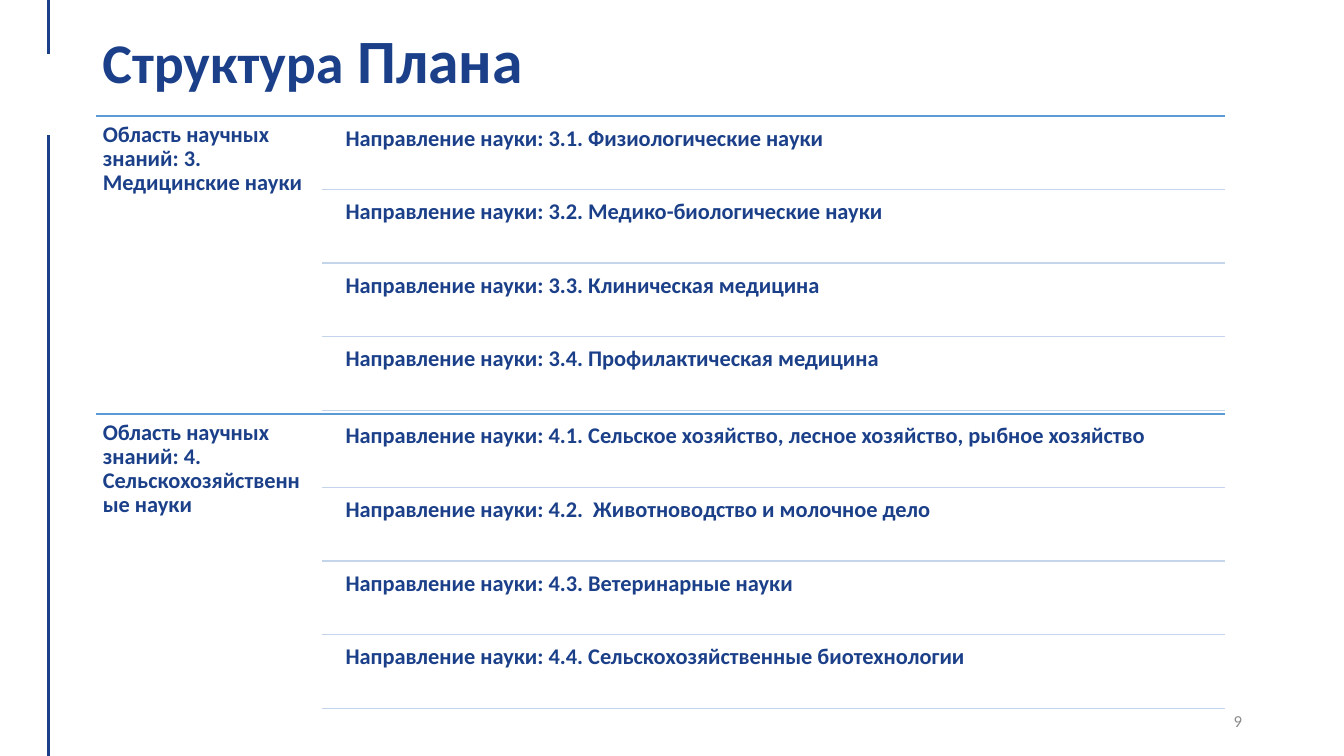
from pptx import Presentation, util as u
from pptx.dml.color import RGBColor
from pptx.enum import shapes, text
from pptx.oxml.ns import qn
from lxml import etree

HUES = {"navy": "1B4089", "blue": "5B9BD5", "pale": "C4D5EB", "gray": "8C8C8C"}
AREAS = [
    ("3. Медицинские науки", [
        "3.1. Физиологические науки",
        "3.2. Медико-биологические науки",
        "3.3. Клиническая медицина",
        "3.4. Профилактическая медицина"]),
    ("4. Сельскохозяйственные науки", [
        "4.1. Сельское хозяйство, лесное хозяйство, рыбное хозяйство",
        "4.2.  Животноводство и молочное дело",
        "4.3. Ветеринарные науки",
        "4.4. Сельскохозяйственные биотехнологии"]),
]
KEY, END = 2, 10      # columns: width of the area names, right edge
BLOCK = 4.05          # rows taken by one area
PAD = 0.05            # rows between a rule and its text


class Deck:
    """Style and current slide; places are in columns and rows of the grid."""
    FONT = "Calibri"
    LEFT, TOP, COL, ROW = 0.95, 1.15, 1.12, 0.73  # inches

    def __init__(self):
        self.prs = Presentation()
        self.prs.slide_width, self.prs.slide_height = u.Inches(13.33), u.Inches(7.5)
        self.slide = self.prs.slides.add_slide(self.prs.slide_layouts[5])

    def spot(self, col, row):
        return (u.Inches(self.LEFT + col * self.COL),
                u.Inches(self.TOP + row * self.ROW))

    def span(self, cols, rows):
        return u.Inches(cols * self.COL), u.Inches(rows * self.ROW)

    def style(self, font, size, hue, bold):
        font.name, font.size, font.bold = self.FONT, u.Pt(size), bold
        font.color.rgb = RGBColor.from_string(HUES[hue])

    def title(self, col, row, cols, rows, parts):
        box = self.slide.shapes.title
        box.left, box.top = self.spot(col, row)
        box.width, box.height = self.span(cols, rows)
        box.text_frame.auto_size = text.MSO_AUTO_SIZE.NONE
        box.text_frame.vertical_anchor = text.MSO_ANCHOR.MIDDLE
        par = box.text_frame.paragraphs[0]
        par.alignment, par.line_spacing = text.PP_ALIGN.LEFT, 0.9
        for words, size in parts:
            run = par.add_run()
            run.text = words
            self.style(run.font, size, "navy", True)

    def line(self, start, stop, hue, width=1):
        rule = self.slide.shapes.add_connector(
            shapes.MSO_CONNECTOR.STRAIGHT, *self.spot(*start), *self.spot(*stop))
        rule.line.color.rgb = RGBColor.from_string(HUES[hue])
        rule.line.width = u.Pt(width)
        etree.SubElement(rule._element.spPr, qn("a:effectLst"))

    def text(self, col, row, cols, rows, words, size=16, hue="navy", bold=True):
        box = self.slide.shapes.add_textbox(
            *self.spot(col, row), *self.span(cols, rows))
        frame = box.text_frame
        frame.word_wrap = True
        par = frame.paragraphs[0]
        par.text = words
        self.style(par.font, size, hue, bold)
        return frame, par

    def entry(self, *place):
        frame, par = self.text(*place)
        frame.margin_left = frame.margin_right = u.Inches(0.07)
        frame.margin_top = frame.margin_bottom = u.Inches(0.07)
        par.line_spacing, par.space_after = 0.9, u.Pt(5.6)

    def number(self, col, row, cols, rows, words):
        frame, par = self.text(col, row, cols, rows, words, 12, "gray", False)
        frame.vertical_anchor = text.MSO_ANCHOR.MIDDLE
        par.alignment = text.PP_ALIGN.RIGHT


def main():
    deck = Deck()

    # Side bars
    for top, low in ((0.26, 8.7), (-1.57, -0.84)):
        deck.line((-0.42, top), (-0.42, low), "navy", 2)

    # Title and page number
    deck.title(-0.03, -1.36, 10.8, 1.3, [("Структура", 40), (" Плана", 44)])
    deck.number(7.56, 7.95, 2.68, 0.55, "9")

    # Areas of knowledge with their fields
    for i, (area, fields) in enumerate(AREAS):
        top = i * BLOCK
        deck.line((0, top), (END, top), "blue")
        deck.entry(0, top, KEY, BLOCK, f"Область научных знаний: {area}")
        for j, field in enumerate(fields):
            row = top + j
            deck.entry(KEY + 0.15, row + PAD, END - KEY - 0.15, 1 - PAD,
                       f"Направление науки: {field}")
            deck.line((KEY, row + 1), (END, row + 1), "pale")

    deck.prs.save("out.pptx")


if __name__ == "__main__":
    main()
